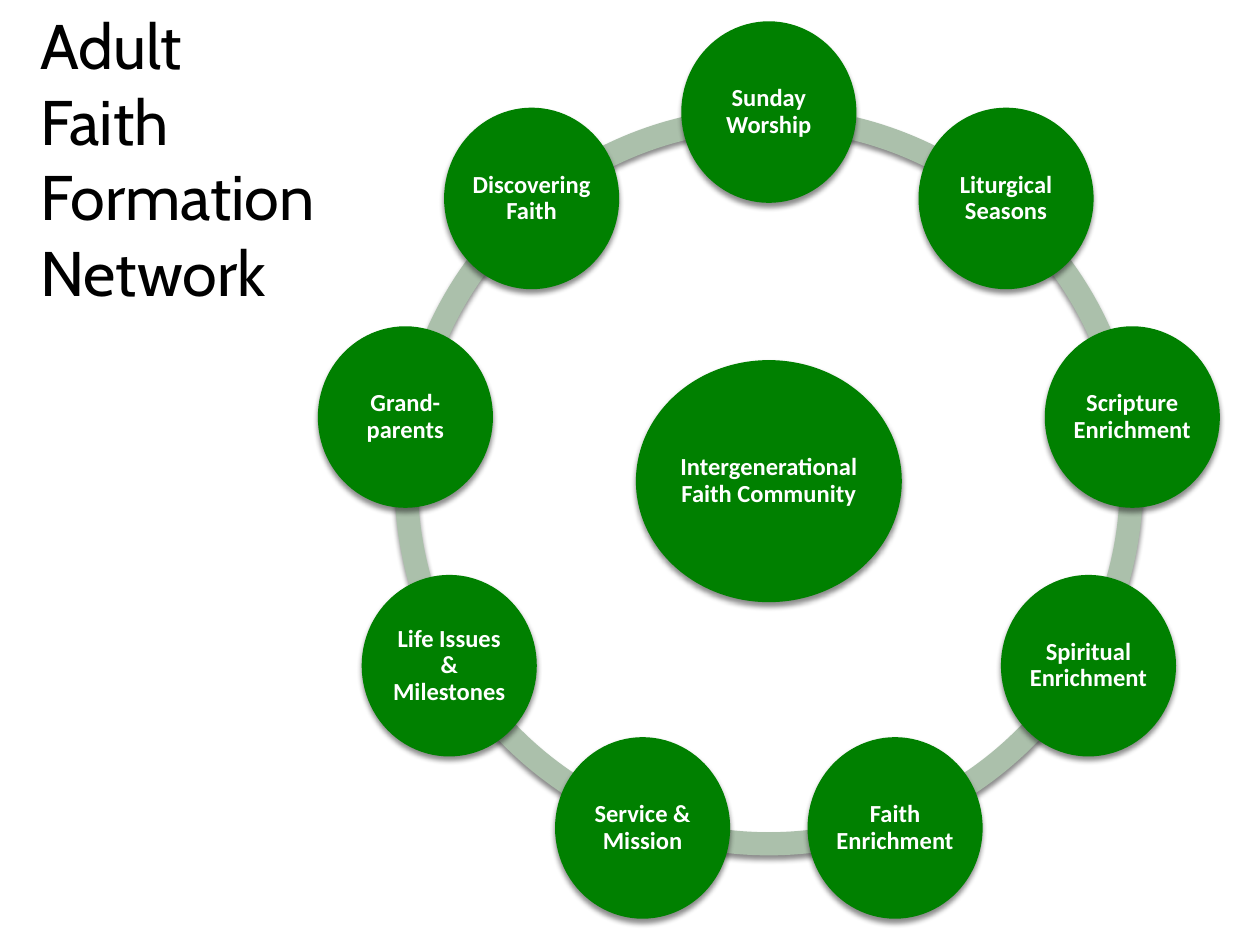
"""Build the Adult Faith Formation Network slide: nine circles on a ring around a hub."""
import math

import lxml.etree
import pptx
import pptx.dml.color
import pptx.enum.shapes
import pptx.enum.text
import pptx.oxml.ns
import pptx.util

Cm = pptx.util.Cm
SHAPES = pptx.enum.shapes.MSO_SHAPE
ALIGN = pptx.enum.text.PP_ALIGN
ANCHOR = pptx.enum.text.MSO_ANCHOR

COLORS = {"circle": "008000", "ring": "ABC0AB", "label": "FFFFFF", "title": "000000", "shadow": "000000"}
TOPICS = [
    "Sunday Worship",
    "Liturgical Seasons",
    "Scripture Enrichment",
    "Spiritual Enrichment",
    "Faith Enrichment",
    "Service & Mission",
    "Life Issues & Milestones",
    "Grand-parents",
    "Discovering Faith",
]
CENTER_X, CENTER_Y = 15.5, 9.7
ORBIT = 7.44
RING_SIZE = 15.09
STEP = 360 / len(TOPICS)
ADJUST_PER_DEGREE = 0.6


def add_shape(page, kind, x, y, width, height, color):
    """Add a filled, shadowed shape centred on x, y (in centimetres)."""
    shape = page.shapes.add_shape(kind, Cm(x - width / 2), Cm(y - height / 2), Cm(width), Cm(height))
    shape.fill.solid()
    shape.fill.fore_color.rgb = pptx.dml.color.RGBColor.from_string(COLORS[color])
    shape.line.fill.background()
    shape.shadow.inherit = False
    qn = pptx.oxml.ns.qn
    effects = shape._element.spPr.find(qn("a:effectLst"))
    shadow = lxml.etree.SubElement(effects, qn("a:outerShdw"), blurRad="38100", dist="30000",
                                   dir="5400000", rotWithShape="0")
    tint = lxml.etree.SubElement(shadow, qn("a:srgbClr"), val=COLORS["shadow"])
    lxml.etree.SubElement(tint, qn("a:alpha"), val="45000")
    return shape


def write_text(box, text, *, font, size, color, bold=False, align=ALIGN.CENTER,
               anchor=ANCHOR.MIDDLE, inset=(0.05, 0.05), spacing=None):
    """Fill a shape with one paragraph per line of text."""
    frame = box.text_frame
    frame.word_wrap = True
    frame.auto_size = pptx.enum.text.MSO_AUTO_SIZE.NONE
    frame.vertical_anchor = anchor
    frame.margin_left = frame.margin_right = Cm(inset[0])
    frame.margin_top = frame.margin_bottom = Cm(inset[1])
    frame.text = text
    for para in frame.paragraphs:
        para.alignment = align
        para.line_spacing = spacing
        for span in para.runs:
            span.font.name = font
            span.font.size = pptx.util.Pt(size)
            span.font.bold = bold
            span.font.color.rgb = pptx.dml.color.RGBColor.from_string(COLORS[color])


deck = pptx.Presentation()
deck.slide_width, deck.slide_height = Cm(25.4), Cm(19.05)
page = deck.slides.add_slide(deck.slide_layouts[5])

title = page.shapes.title
title.left, title.top, title.width, title.height = Cm(0.56), Cm(0), Cm(7.59), Cm(6.4)
write_text(title, "Adult\nFaith Formation\nNetwork", font="Cabin", size=36, color="title",
           align=ALIGN.LEFT, anchor=ANCHOR.TOP, inset=(0.25, 0.13))

for index in reversed(range(len(TOPICS))):
    start = (270 + index * STEP) % 360
    arc = add_shape(page, SHAPES.BLOCK_ARC, CENTER_X, CENTER_Y, RING_SIZE, RING_SIZE, "ring")
    arc.adjustments[0] = start * ADJUST_PER_DEGREE
    arc.adjustments[1] = (start + STEP) % 360 * ADJUST_PER_DEGREE
    arc.adjustments[2] = 0.031

label_style = {"font": "Calibri", "size": 14, "color": "label", "bold": True, "spacing": 0.9}
hub = add_shape(page, SHAPES.OVAL, CENTER_X, CENTER_Y, 5.36, 4.88, "circle")
write_text(hub, "Intergenerational Faith Community", **label_style)

for index, topic in enumerate(TOPICS):
    angle = math.radians(index * STEP - 90)
    x = CENTER_X + ORBIT * math.cos(angle)
    y = CENTER_Y + ORBIT * math.sin(angle)
    circle = add_shape(page, SHAPES.OVAL, x, y, 3.53, 3.66, "circle")
    write_text(circle, topic, **label_style)

deck.save("out.pptx")
